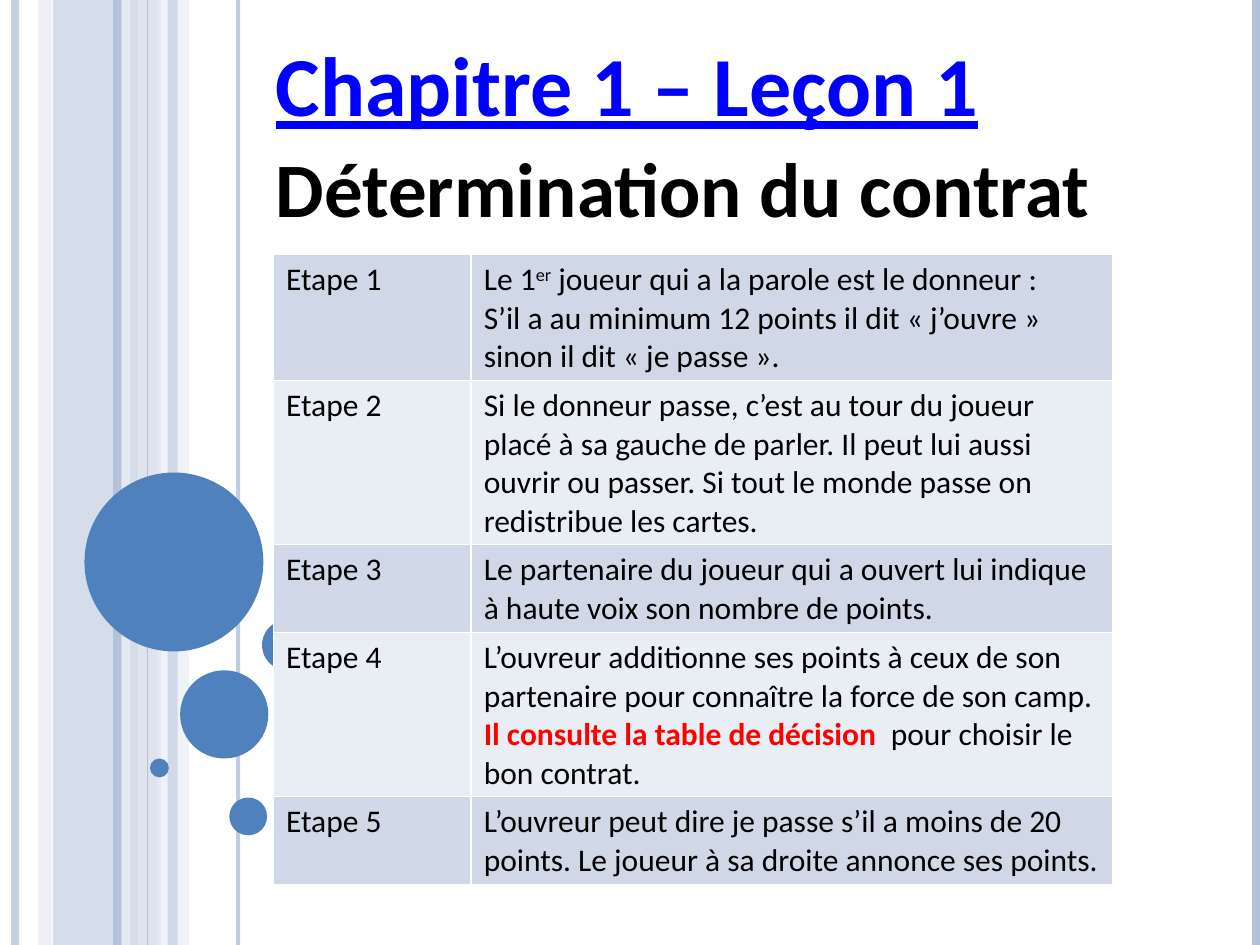
"""Build the bridge lesson slide on how the contract is determined."""
from lxml import etree
from pptx import Presentation
from pptx.dml.color import RGBColor
from pptx.enum.shapes import MSO_CONNECTOR, MSO_SHAPE
from pptx.oxml.ns import qn
from pptx.util import Pt

STRAIGHT = MSO_CONNECTOR.STRAIGHT
RECTANGLE, OVAL = MSO_SHAPE.RECTANGLE, MSO_SHAPE.OVAL
PX = 9144
PAGE_WIDTH, PAGE_HEIGHT = 1000, 750

BLACK = RGBColor(0x00, 0x00, 0x00)
RED = RGBColor(0xFF, 0x00, 0x00)
LINK_BLUE = RGBColor(0x00, 0x00, 0xFF)
BALL_BLUE = RGBColor(0x4F, 0x81, 0xBD)
STRIPE_BLUE = RGBColor(0xB3, 0xC1, 0xDB)
LIGHT_BLUE = RGBColor(0xD0, 0xD8, 0xE8)
PALE_BLUE = RGBColor(0xE9, 0xED, 0xF4)

BANDS = [
    (42, 67, STRIPE_BLUE, 54),
    (30, 11, LIGHT_BLUE, 36),
    (108, 20, LIGHT_BLUE, 70),
    (125, 25, PALE_BLUE, 71),
]
RULES = [
    (12, STRIPE_BLUE, 4.5, 73),
    (100, PALE_BLUE, 4.5, 83),
    (93, STRIPE_BLUE, 4.5, 100),
    (189, STRIPE_BLUE, 2.25, 82),
    (117, STRIPE_BLUE, 0.75, 100),
    (997, STRIPE_BLUE, 4.5, 100),
]
FRONT_BAND = (133, 8, STRIPE_BLUE, 51)
BALLS = [(67, 375, 142), (143, 532, 70), (119, 602, 15), (182, 633, 30), (208, 492, 40)]

COLUMN_WIDTHS = [157, 509]
STEPS = [
    (100, [
        [("Le 1", ""), ("er", "superscript"), (" joueur qui a la parole est le donneur :", "")],
        [("S’il a au minimum 12 points il dit « j’ouvre » sinon il dit « je passe ».", "")],
    ]),
    (130, [[("Si le donneur passe, c’est au tour du joueur placé à sa gauche de parler. "
             "Il peut lui aussi ouvrir ou passer. Si tout le monde passe on redistribue "
             "les cartes.", "")]]),
    (70, [[("Le partenaire du joueur qui a ouvert lui indique à haute voix son nombre "
            "de points.", "")]]),
    (130, [
        [("L’ouvreur additionne ses points à ceux de son partenaire pour connaître "
          "la force de son camp.", "")],
        [("Il consulte la table de décision  ", "key"), ("pour choisir le bon contrat.", "")],
    ]),
    (70, [[("L’ouvreur peut dire je passe s’il a moins de 20 points. Le joueur à sa "
            "droite annonce ses points.", "")]]),
]


class Page:
    """Hold the text style and the current slide, and draw elements on it."""

    font_name = "Calibri"
    body_size = 18

    def __init__(self, slide):
        self.shapes = slide.shapes

    def fade(self, element, opacity):
        if opacity < 100:
            color = element.find(".//" + qn("a:srgbClr"))
            etree.SubElement(color, qn("a:alpha"), val=str(opacity * 1000))

    def shape(self, kind, left, top, width, height, color, opacity=100):
        shape = self.shapes.add_shape(kind, left * PX, top * PX, width * PX, height * PX)
        shape.shadow.inherit = False
        shape.fill.solid()
        shape.fill.fore_color.rgb = color
        shape.line.fill.background()
        self.fade(shape.element.spPr, opacity)

    def band(self, left, width, color, opacity):
        self.shape(RECTANGLE, left, 0, width, PAGE_HEIGHT, color, opacity)

    def ball(self, left, top, size):
        self.shape(OVAL, left, top, size, size, BALL_BLUE)

    def rule(self, x, color, weight, opacity):
        rule = self.shapes.add_connector(STRAIGHT, x * PX, 0, x * PX, PAGE_HEIGHT * PX)
        rule.line.color.rgb = color
        rule.line.width = Pt(weight)
        properties = rule.element.spPr
        self.fade(properties, opacity)
        etree.SubElement(properties, qn("a:effectLst"))

    def style(self, span, size, color=BLACK, bold=False):
        span.font.name = self.font_name
        span.font.size = Pt(size)
        span.font.color.rgb = color
        span.font.bold = bold

    def heading(self, text, left, top, width, height, size, color=BLACK, underline=False):
        box = self.shapes.add_textbox(left * PX, top * PX, width * PX, height * PX)
        box.text_frame.word_wrap = True
        box.text_frame.text = text
        span = box.text_frame.paragraphs[0].runs[0]
        self.style(span, size, color, bold=True)
        span.font.underline = underline

    def fill_cell(self, cell, paragraphs, color):
        cell.fill.solid()
        cell.fill.fore_color.rgb = color
        frame = cell.text_frame
        for index, pieces in enumerate(paragraphs):
            para = frame.add_paragraph() if index else frame.paragraphs[0]
            for text, role in pieces:
                span = para.add_run()
                span.text = text
                is_key = role == "key"
                self.style(span, self.body_size, RED if is_key else BLACK, is_key)
                if role == "superscript":
                    span.font._element.set("baseline", "30000")

    def step_table(self, left, top, widths, steps):
        height = sum(row_height for row_height, _ in steps)
        frame = self.shapes.add_table(len(steps), len(widths), left * PX, top * PX,
                                      sum(widths) * PX, height * PX)
        table = frame.table
        table.first_row = False
        table.horz_banding = False
        for column, width in zip(table.columns, widths):
            column.width = width * PX
        for index, (row_height, paragraphs) in enumerate(steps):
            table.rows[index].height = row_height * PX
            color = PALE_BLUE if index % 2 else LIGHT_BLUE
            self.fill_cell(table.cell(index, 0), [[(f"Etape {index + 1}", "")]], color)
            self.fill_cell(table.cell(index, 1), paragraphs, color)


def main():
    deck = Presentation()
    deck.slide_width = PAGE_WIDTH * PX
    deck.slide_height = PAGE_HEIGHT * PX
    page = Page(deck.slides.add_slide(deck.slide_layouts[6]))
    for band in BANDS:
        page.band(*band)
    for rule in RULES:
        page.rule(*rule)
    page.band(*FRONT_BAND)
    for ball in BALLS:
        page.ball(*ball)
    page.heading("Chapitre 1 – Leçon 1", 209, 21, 748, 91, 48, LINK_BLUE, underline=True)
    page.heading("Détermination du contrat", 209, 107, 740, 84, 44)
    page.step_table(217, 202, COLUMN_WIDTHS, STEPS)
    deck.save("out.pptx")


if __name__ == "__main__":
    main()
